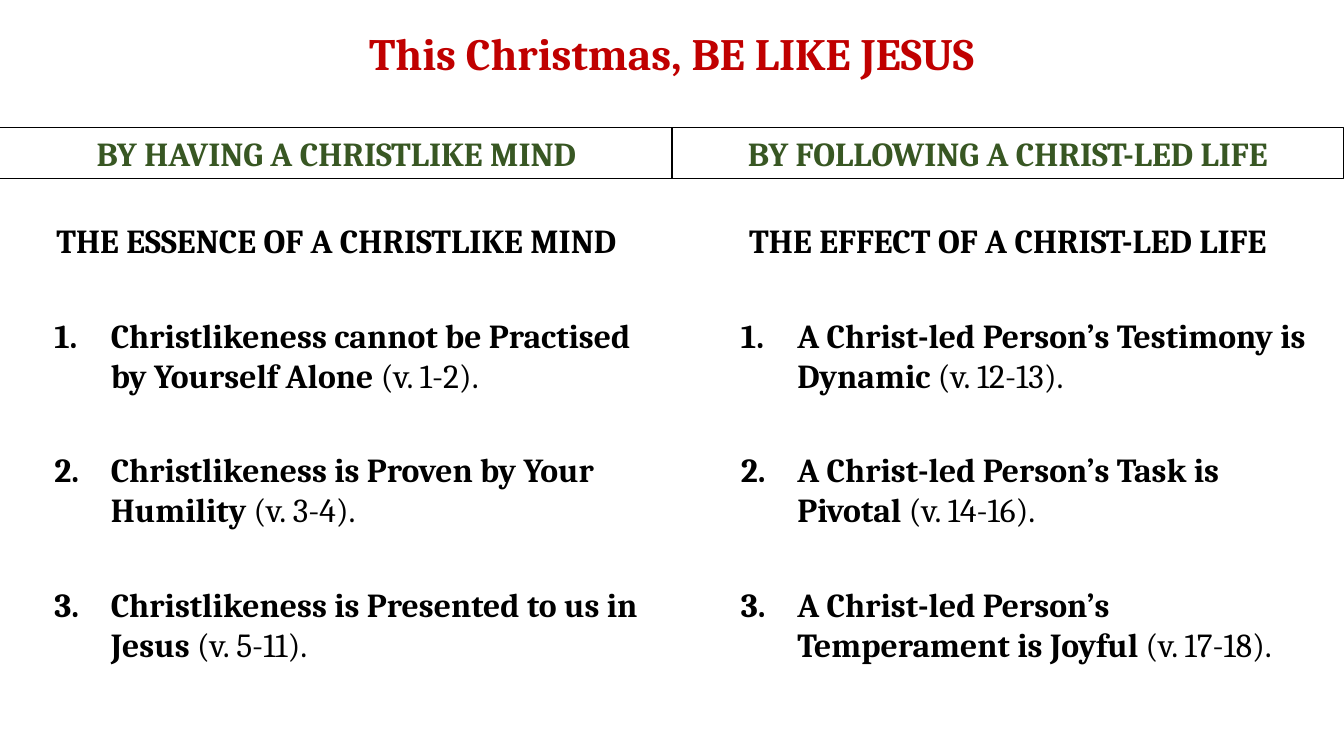
from lxml import etree
from pptx import Presentation
from pptx.dml.color import RGBColor
from pptx.enum.shapes import MSO_SHAPE
from pptx.enum.text import MSO_ANCHOR, MSO_AUTO_SIZE, PP_ALIGN
from pptx.oxml.ns import qn
from pptx.util import Inches, Pt

RECT = MSO_SHAPE.RECTANGLE
TOP = MSO_ANCHOR.TOP
GROW = MSO_AUTO_SIZE.SHAPE_TO_FIT_TEXT
CENTER, LEFT = PP_ALIGN.CENTER, PP_ALIGN.LEFT

RED, GREEN, BLACK = "C00000", "385723", "000000"
SLIDE_W, HALF_W = 13.33, 6.67
INDENT = 0.56
POINT_TOP, POINT_STEP = 3.07, 1.335

# Each column: left, banner, heading, left of points, (width, point, verses)
COLUMNS = [
    (0, "BY HAVING A CHRISTLIKE MIND", "THE ESSENCE OF A CHRISTLIKE MIND", 0.44, [
        (6.12, "Christlikeness cannot be Practised by Yourself Alone ", "(v. 1-2)."),
        (6.12, "Christlikeness is Proven by Your Humility ", "(v. 3-4)."),
        (6.12, "Christlikeness is Presented to us in Jesus ", "(v. 5-11)."),
    ]),
    (SLIDE_W - HALF_W, "BY FOLLOWING A CHRIST-LED LIFE", "THE EFFECT OF A CHRIST-LED LIFE", 7.25, [
        (5.86, "A Christ-led Person’s Testimony is Dynamic ", "(v. 12-13)."),
        (5.75, "A Christ-led Person’s Task is Pivotal ", "(v. 14-16)."),
        (5.75, "A Christ-led Person’s Temperament is Joyful ", "(v. 17-18)."),
    ]),
]


def rgb(value):
    return RGBColor.from_string(value)


def write(shape, bold_text, color, size=24, plain_text="", align=CENTER):
    """Fill the shape with one paragraph: a bold run, then an optional plain one."""
    tf = shape.text_frame
    for name, value in {"word_wrap": True, "auto_size": GROW, "vertical_anchor": TOP}.items():
        setattr(tf, name, value)
    p = tf.paragraphs[0]
    p.alignment = align
    for text, bold in ((bold_text, True), (plain_text, False)):
        if text:
            r = p.add_run()
            r.text = text
            r.font.color.rgb = rgb(color)
            for name, value in {"name": "Cambria", "size": Pt(size), "bold": bold}.items():
                setattr(r.font, name, value)
    return p


prs = Presentation()
prs.slide_width, prs.slide_height = Inches(SLIDE_W), Inches(7.5)
s = prs.slides.add_slide(prs.slide_layouts[5])

title = s.shapes.title
title.left, title.top = Inches(0), Inches(0.2)
title.width, title.height = Inches(SLIDE_W), Inches(0.64)
write(title, "This Christmas, BE LIKE JESUS", RED, size=32)

for left, banner_text, heading_text, point_left, points in COLUMNS:
    banner = s.shapes.add_shape(RECT, Inches(left), Inches(1.27), Inches(HALF_W), Inches(0.5))
    banner.shadow.inherit = False
    banner.fill.background()
    banner.line.color.rgb = rgb(BLACK)
    banner.line.width = Pt(0.75)
    write(banner, banner_text, GREEN)

    heading = s.shapes.add_textbox(Inches(left), Inches(2.13), Inches(HALF_W), Inches(0.5))
    write(heading, heading_text, BLACK)

    for i, (width, point_text, verses) in enumerate(points):
        point = s.shapes.add_textbox(Inches(point_left), Inches(POINT_TOP + i * POINT_STEP),
                                     Inches(width), Inches(0.91))
        p = write(point, point_text, BLACK, plain_text=verses, align=LEFT)
        pPr = p._p.get_or_add_pPr()
        pPr.set("marL", str(Inches(INDENT)))
        pPr.set("indent", str(-Inches(INDENT)))
        etree.SubElement(pPr, qn("a:buAutoNum"), type="arabicPeriod", startAt=str(i + 1))

prs.save("out.pptx")
